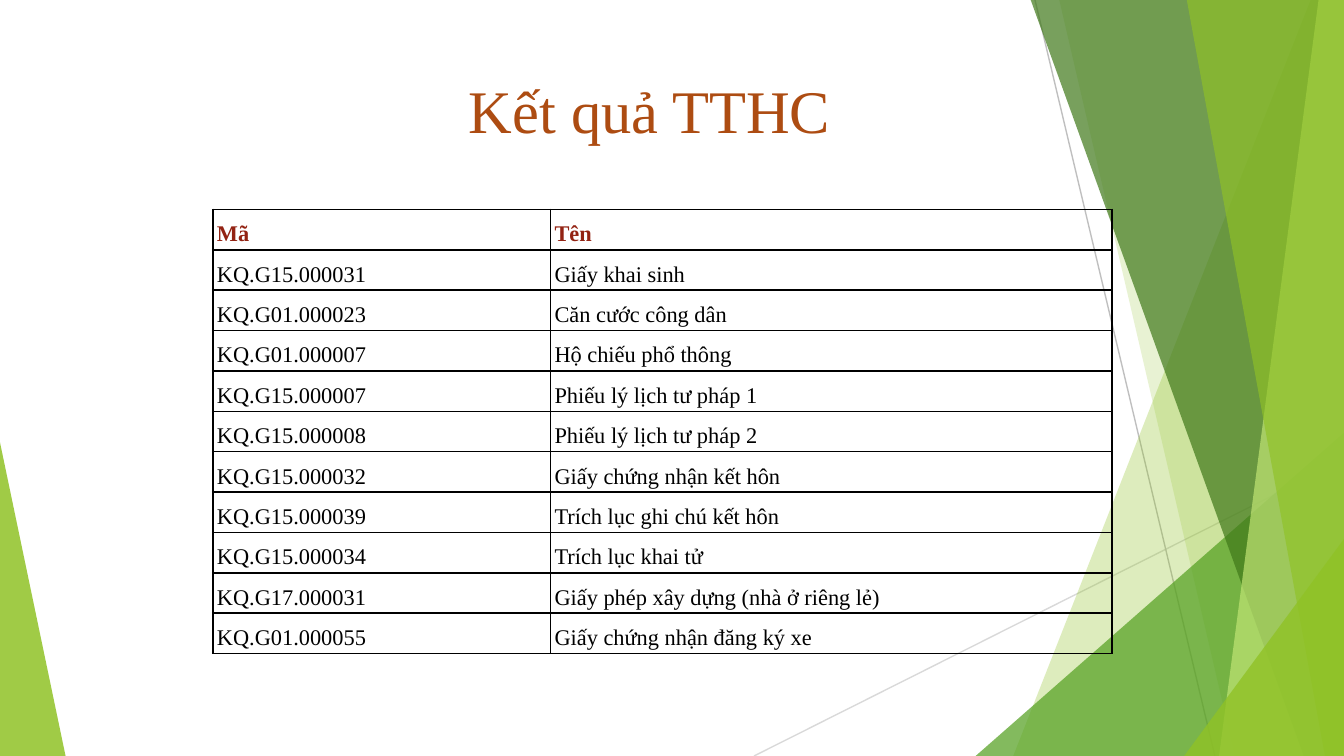
from dataclasses import dataclass

from lxml import etree
from pptx import Presentation
from pptx import util as u
from pptx.dml.color import RGBColor
from pptx.enum import shapes, text
from pptx.oxml import ns


@dataclass(frozen=True)
class Theme:
    font: str = "Times New Roman"
    title_size: float = 32.4
    body_size: float = 12
    title: str = "AD4C12"
    header: str = "932313"
    ink: str = "000000"
    lime: str = "90C226"
    green: str = "54A021"
    forest: str = "3F7819"
    pale: str = "C0E474"
    light_rule: str = "D9D9D9"
    dark_rule: str = "BFBFBF"
    rule_width: float = 0.75
    border_width: float = 1


theme = Theme()
WIDTH, HEIGHT = 25.4, 14.29

TITLE = "Kết quả TTHC"
ROWS = [
    ("Mã", "Tên"),
    ("KQ.G15.000031", "Giấy khai sinh"),
    ("KQ.G01.000023", "Căn cước công dân"),
    ("KQ.G01.000007", "Hộ chiếu phổ thông"),
    ("KQ.G15.000007", "Phiếu lý lịch tư pháp 1"),
    ("KQ.G15.000008", "Phiếu lý lịch tư pháp 2"),
    ("KQ.G15.000032", "Giấy chứng nhận kết hôn"),
    ("KQ.G15.000039", "Trích lục ghi chú kết hôn"),
    ("KQ.G15.000034", "Trích lục khai tử"),
    ("KQ.G17.000031", "Giấy phép xây dựng (nhà ở riêng lẻ)"),
    ("KQ.G01.000055", "Giấy chứng nhận đăng ký xe"),
]
TITLE_BOX = (4.24, 1.12, 16.08, 1.27)
TITLE_INSET = 0.26
TABLE_LEFT, TABLE_TOP = 4.02, 3.96
COLUMN_WIDTHS = (6.38, 10.62)
ROW_HEIGHT = 0.76
CELL_INSET = 0.08

LEFT_FACET = ([(0, 8.36), (1.24, HEIGHT), (0, HEIGHT)], theme.lime, 85)
RULES = [
    ((14.25, HEIGHT), (WIDTH, 8.69), theme.light_rule),
    ((19.56, 0), (22.96, HEIGHT), theme.dark_rule),
]


def right_facet(top, bottom):
    return [(top, 0), (bottom, HEIGHT), (WIDTH, HEIGHT), (WIDTH, 0)]


def corner_facet(left, top):
    return [(left, HEIGHT), (WIDTH, top), (WIDTH, HEIGHT)]


RIGHT_FACETS = [
    (right_facet(24.77, 19.15), theme.lime, 30),
    (right_facet(20.02, 23.34), theme.lime, 20),
    (corner_facet(18.44, 8.18), theme.green, 72),
    (right_facet(19.48, 24.64), theme.forest, 70),
    (right_facet(24.92, 23.04), theme.pale, 70),
    (right_facet(22.43, 25.04), theme.lime, 65),
    (corner_facet(22.38, 10.19), theme.lime, 80),
]


def color(code):
    return RGBColor.from_string(code)


def add_facet(page, points, code, opacity):
    corners = [(u.Cm(x), u.Cm(y)) for x, y in points]
    builder = page.shapes.build_freeform(*corners[0])
    builder.add_line_segments(corners[1:], close=True)
    facet = builder.convert_to_shape()
    facet.shadow.inherit = False
    facet.fill.solid()
    facet.fill.fore_color.rgb = color(code)
    facet.line.fill.background()
    tint = facet.fill._xPr.find(".//" + ns.qn("a:srgbClr"))
    etree.SubElement(tint, ns.qn("a:alpha"), val=str(opacity * 1000))


def add_rule(page, start, end, code):
    rule = page.shapes.add_connector(
        shapes.MSO_CONNECTOR.STRAIGHT, *(u.Cm(value) for value in start + end)
    )
    rule.line.color.rgb = color(code)
    rule.line.width = u.Pt(theme.rule_width)
    etree.SubElement(rule._element.spPr, ns.qn("a:effectLst"))


def style(para, size, code, bold=False):
    para.font.name = theme.font
    para.font.size = u.Pt(size)
    para.font.color.rgb = color(code)
    para.font.bold = bold


def add_title(page):
    frame = page.shapes.add_textbox(*map(u.Cm, TITLE_BOX)).text_frame
    frame.word_wrap = True
    frame.margin_left = frame.margin_right = frame.margin_bottom = 0
    frame.margin_top = u.Cm(TITLE_INSET)
    para = frame.paragraphs[0]
    para.text = TITLE
    para.alignment = text.PP_ALIGN.CENTER
    style(para, theme.title_size, theme.title)


def add_borders(cell):
    properties = cell._tc.get_or_add_tcPr()
    for index, side in enumerate(("a:lnL", "a:lnR", "a:lnT", "a:lnB")):
        border = etree.Element(ns.qn(side), w=str(u.Pt(theme.border_width)))
        fill = etree.SubElement(border, ns.qn("a:solidFill"))
        etree.SubElement(fill, ns.qn("a:srgbClr"), val=theme.ink)
        properties.insert(index, border)


def fill_cell(cell, content, is_header):
    cell.margin_left = cell.margin_right = u.Cm(CELL_INSET)
    cell.margin_top = cell.margin_bottom = 0
    cell.vertical_anchor = text.MSO_ANCHOR.TOP
    cell.fill.background()
    add_borders(cell)
    para = cell.text_frame.paragraphs[0]
    para.text = content
    para.alignment = text.PP_ALIGN.JUSTIFY
    para.line_spacing = 1.5
    para.space_after = u.Pt(8)
    style(para, theme.body_size, theme.header if is_header else theme.ink, is_header)


def add_results(page):
    table = page.shapes.add_table(
        len(ROWS), len(COLUMN_WIDTHS), u.Cm(TABLE_LEFT), u.Cm(TABLE_TOP),
        u.Cm(sum(COLUMN_WIDTHS)), u.Cm(ROW_HEIGHT * len(ROWS)),
    ).table
    table.first_row = table.horz_banding = False
    for column, width in zip(table.columns, COLUMN_WIDTHS):
        column.width = u.Cm(width)
    for index, (row, contents) in enumerate(zip(table.rows, ROWS)):
        row.height = u.Cm(ROW_HEIGHT)
        for cell, content in zip(row.cells, contents):
            fill_cell(cell, content, index == 0)


def main():
    deck = Presentation()
    deck.slide_width, deck.slide_height = u.Cm(WIDTH), u.Cm(HEIGHT)
    page = deck.slides.add_slide(deck.slide_layouts[6])
    add_facet(page, *LEFT_FACET)
    for rule in RULES:
        add_rule(page, *rule)
    for facet in RIGHT_FACETS:
        add_facet(page, *facet)
    add_title(page)
    add_results(page)
    deck.save("out.pptx")


if __name__ == "__main__":
    main()
